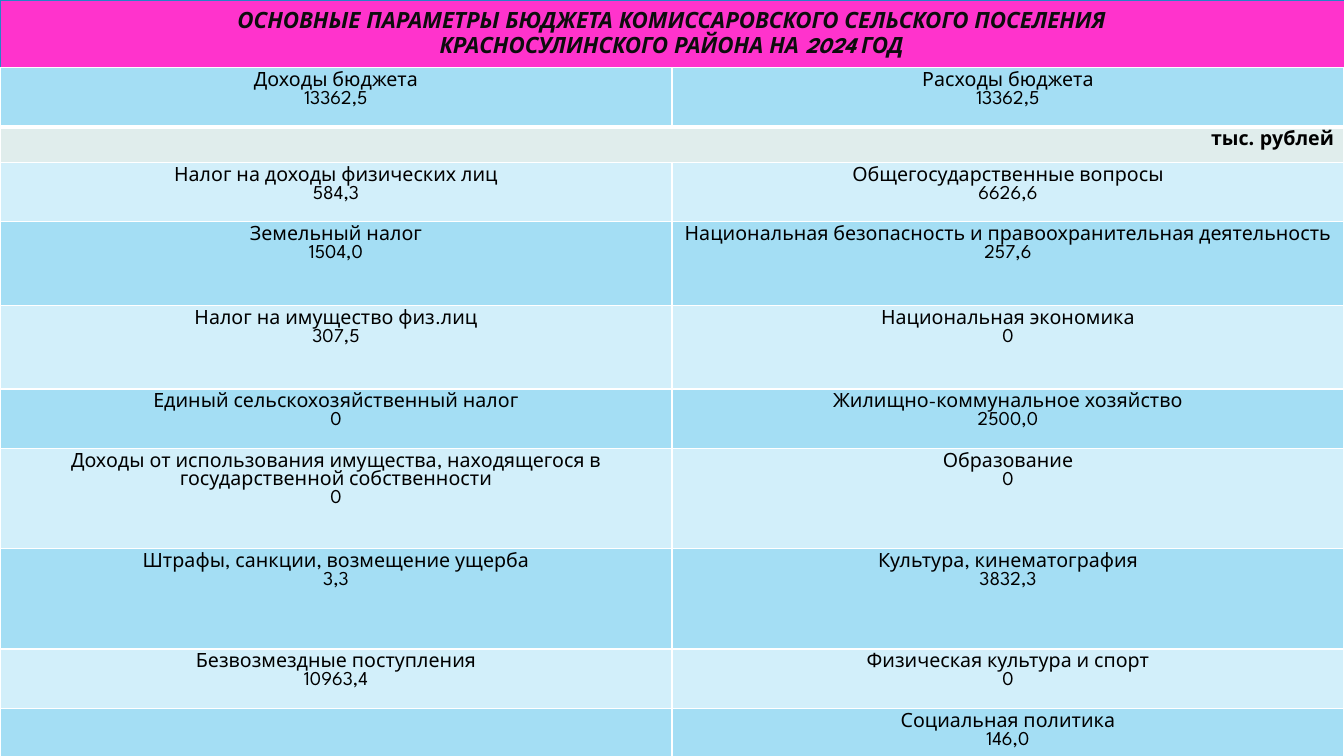
from lxml import etree
from pptx import Presentation
from pptx.dml.color import RGBColor
from pptx.enum.shapes import MSO_SHAPE as Shape
from pptx.enum.text import MSO_ANCHOR as Anchor, PP_ALIGN as Align
from pptx.oxml.ns import qn
from pptx.util import Inches, Pt

TITLE = ["ОСНОВНЫЕ ПАРАМЕТРЫ БЮДЖЕТА КОМИССАРОВСКОГО СЕЛЬСКОГО ПОСЕЛЕНИЯ",
         "КРАСНОСУЛИНСКОГО РАЙОНА НА 2024 ГОД"]
UNIT = "тыс. рублей"
# Row height, then income and spending as (name, sum); UNIT spans both columns
ROWS = [
    (0.59, ("Доходы бюджета", "13362,5"), ("Расходы бюджета", "13362,5")),
    (0.35, (UNIT,), ()),
    (0.59, ("Налог на доходы физических лиц", "584,3"),
     ("Общегосударственные вопросы", "6626,6")),
    (0.83, ("Земельный налог", "1504,0"),
     ("Национальная безопасность и правоохранительная деятельность", "257,6")),
    (0.83, ("Налог на имущество физ.лиц", "307,5"),
     ("Национальная экономика", "0")),
    (0.59, ("Единый сельскохозяйственный налог", "0"),
     ("Жилищно-коммунальное хозяйство", "2500,0")),
    (0.99, ("Доходы от использования имущества, находящегося в "
            "государственной собственности", "0"), ("Образование", "0")),
    (1.0, ("Штрафы, санкции, возмещение ущерба", "3,3"),
     ("Культура, кинематография", "3832,3")),
    (0.59, ("Безвозмездные поступления", "10963,4"),
     ("Физическая культура и спорт", "0")),
    (0.9, (), ("Социальная политика", "146,0")),
]
HEX = {"title": "FF33CC", "edge": "2683C6", "head": "0D0D0D", "ink": "000000",
       "dark": "A4DEF4", "light": "D2EFFA", "unit": "E0EDEC", "rule": "FFFFFF"}
FONT = "League Spartan"
WIDE, HIGH, TOP = 13.33, 7.5, 0.67


def color(name):
    return RGBColor.from_string(HEX[name])


def write(frame, lines, size=14, ink="ink", align=Align.CENTER, bold=False,
          italic=False, space=None):
    for i, line in enumerate(lines):
        par = frame.paragraphs[0] if i == 0 else frame.add_paragraph()
        par.alignment, par.line_spacing = align, space
        run = par.add_run()
        run.text = line
        font = run.font
        font.name, font.size = FONT, Pt(size)
        font.bold, font.italic = bold, italic
        font.color.rgb = color(ink)


def rule(cell, low=1):
    """Draw white borders round a cell; low is the bottom width in points."""
    props = cell._tc.get_or_add_tcPr()
    for i, side in enumerate("LRTB"):
        line = etree.Element(qn(f"a:ln{side}"),
                             w=str(Pt(low if side == "B" else 1)))
        fill = etree.SubElement(line, qn("a:solidFill"))
        etree.SubElement(fill, qn("a:srgbClr"), val=HEX["rule"])
        props.insert(i, line)


deck = Presentation()
deck.slide_width, deck.slide_height = Inches(WIDE), Inches(HIGH)
slide = deck.slides.add_slide(deck.slide_layouts[6])

band = slide.shapes.add_shape(Shape.RECTANGLE, 0, 0, Inches(WIDE), Inches(TOP))
band.shadow.inherit = False
band.fill.solid()
band.fill.fore_color.rgb = color("title")
band.line.color.rgb = color("edge")
band.line.width = Pt(0.5)
band.text_frame.word_wrap = True
band.text_frame.vertical_anchor = Anchor.MIDDLE
write(band.text_frame, TITLE, size=16, ink="head", bold=True, italic=True,
      space=0.9)

total = sum(row[0] for row in ROWS)
table = slide.shapes.add_table(len(ROWS), 2, 0, Inches(TOP), Inches(WIDE),
                               Inches(total)).table
for col in table.columns:
    col.width = Inches(WIDE / 2)
for r, (tall, *pair) in enumerate(ROWS):
    table.rows[r].height = Inches(tall)
    unit = pair[0] == (UNIT,)
    shade = "unit" if unit else "dark" if r == 0 or r % 2 else "light"
    for c, lines in enumerate(pair):
        cell = table.cell(r, c)
        cell.fill.solid()
        cell.fill.fore_color.rgb = color(shade)
        rule(cell, low=3 if r == 0 else 1)
        write(cell.text_frame, lines, bold=unit,
              align=Align.RIGHT if unit else Align.CENTER)
    if unit:
        table.cell(r, 0).merge(table.cell(r, 1))

deck.save("out.pptx")
